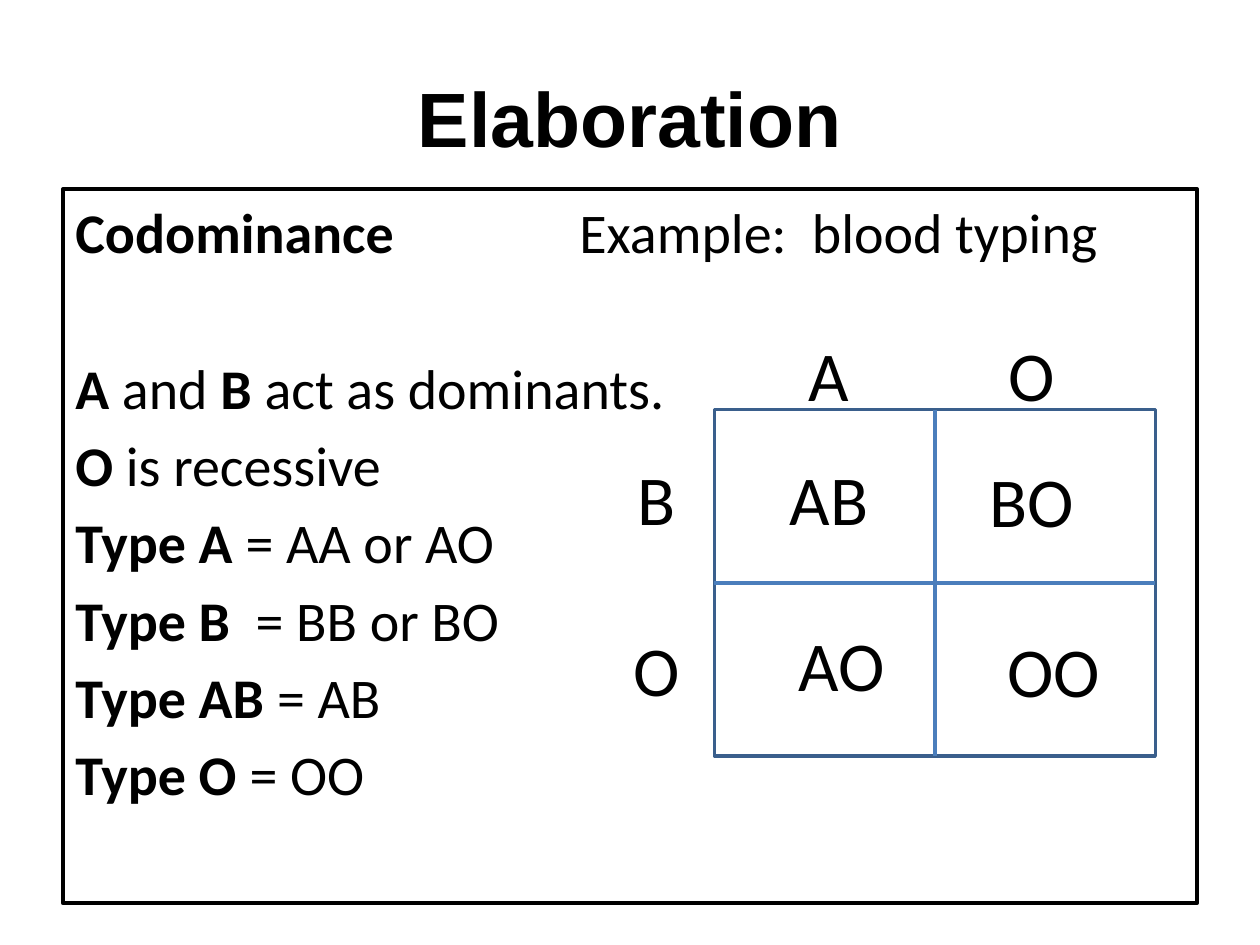
from lxml.etree import SubElement
from pptx import Presentation
from pptx.dml.color import RGBColor
from pptx.enum.shapes import MSO_CONNECTOR, MSO_SHAPE
from pptx.enum.text import MSO_ANCHOR, PP_ALIGN
from pptx.oxml.ns import qn
from pptx.util import Inches, Pt

FACTS = [
    [("A", True), (" and ", False), ("B", True), (" act as dominants.", False)],
    [("O", True), (" is recessive", False)],
    [("Type A ", True), ("= AA or AO", False)],
    [("Type B  ", True), ("= BB or BO", False)],
    [("Type AB ", True), ("= AB", False)],
    [("Type O ", True), ("= OO", False)],
]
HEADS = [
    ("A", 6.12, 2.58),
    ("O", 7.73, 2.58),
    ("B", 4.75, 3.56),
    ("O", 4.75, 4.92),
]
PAIRS = [
    ("AB", 6.12, 3.56, 0.92),
    ("BO", 7.73, 3.58, 0.92),
    ("OO", 7.8, 4.93, 1.12),
    ("AO", 6.22, 4.88, 0.92),
]


def color(text):
    return RGBColor.from_string(text)


def style(para, size, name="Calibri"):
    para.font.size = Pt(size)
    para.font.name = name
    para.font.color.rgb = color("000000")


def add_label(shapes, text, left, top, width=0.92, height=0.77, size=40, name="Calibri"):
    box = shapes.add_textbox(Inches(left), Inches(top), Inches(width), Inches(height))
    frame = box.text_frame
    frame.word_wrap = True
    frame.vertical_anchor = MSO_ANCHOR.MIDDLE
    para = frame.paragraphs[0]
    para.text = text
    para.alignment = PP_ALIGN.CENTER
    style(para, size, name)
    return para


def add_frame(shapes, left, top, width, height, line, weight):
    rect = shapes.add_shape(
        MSO_SHAPE.RECTANGLE, Inches(left), Inches(top), Inches(width), Inches(height)
    )
    rect.shadow.inherit = False
    rect.fill.background()
    rect.line.color.rgb = color(line)
    rect.line.width = Pt(weight)
    return rect


def add_rule(shapes, left, top, right, bottom):
    rule = shapes.add_connector(
        MSO_CONNECTOR.STRAIGHT, Inches(left), Inches(top), Inches(right), Inches(bottom)
    )
    rule.line.color.rgb = color("4B7EBC")
    rule.line.width = Pt(2.25)
    SubElement(rule._element.spPr, qn("a:effectLst"))


def add_tab(para, pos):
    tabs = SubElement(para._p.get_or_add_pPr(), qn("a:tabLst"))
    SubElement(tabs, qn("a:tab"), pos=str(Inches(pos)), algn="l")


def add_runs(para, runs):
    para.alignment = PP_ALIGN.LEFT
    style(para, 32)
    for text, bold in runs:
        run = para.add_run()
        run.text = text
        run.font.bold = bold


def add_notes(shapes):
    frame = add_frame(shapes, 0.5, 1.5, 9, 5.67, "000000", 2.25).text_frame
    frame.word_wrap = True
    frame.vertical_anchor = MSO_ANCHOR.TOP
    frame.margin_top = Inches(0.07)
    first = frame.paragraphs[0]
    add_tab(first, 4)
    add_runs(first, [("Codominance\t", True), ("Example:  blood typing", False)])
    for index, runs in enumerate(FACTS):
        para = frame.add_paragraph()
        para.space_before = Pt(5.75 if index else 50.5)
        add_runs(para, runs)


def add_square(shapes, left, top, width, height):
    group = shapes.add_group_shape().shapes
    add_frame(group, left, top, width, height, "3A5F8C", 2)
    midx, midy = left + width / 2, top + height / 2
    add_rule(group, left, midy, left + width, midy)
    add_rule(group, midx, top, midx, top + height)
    for head in HEADS:
        add_label(group, *head)
    for pair in PAIRS:
        add_label(shapes, *pair)


def main():
    deck = Presentation()
    deck.slide_width = Inches(10)
    deck.slide_height = Inches(7.5)
    shapes = deck.slides.add_slide(deck.slide_layouts[6]).shapes
    title = add_label(shapes, "Elaboration", 0.5, 0.3, 9, 1.25, 44, "Arial")
    title.font.bold = True
    add_notes(shapes)
    add_square(shapes, 5.67, 3.25, 3.5, 2.75)
    deck.save("out.pptx")


if __name__ == "__main__":
    main()
